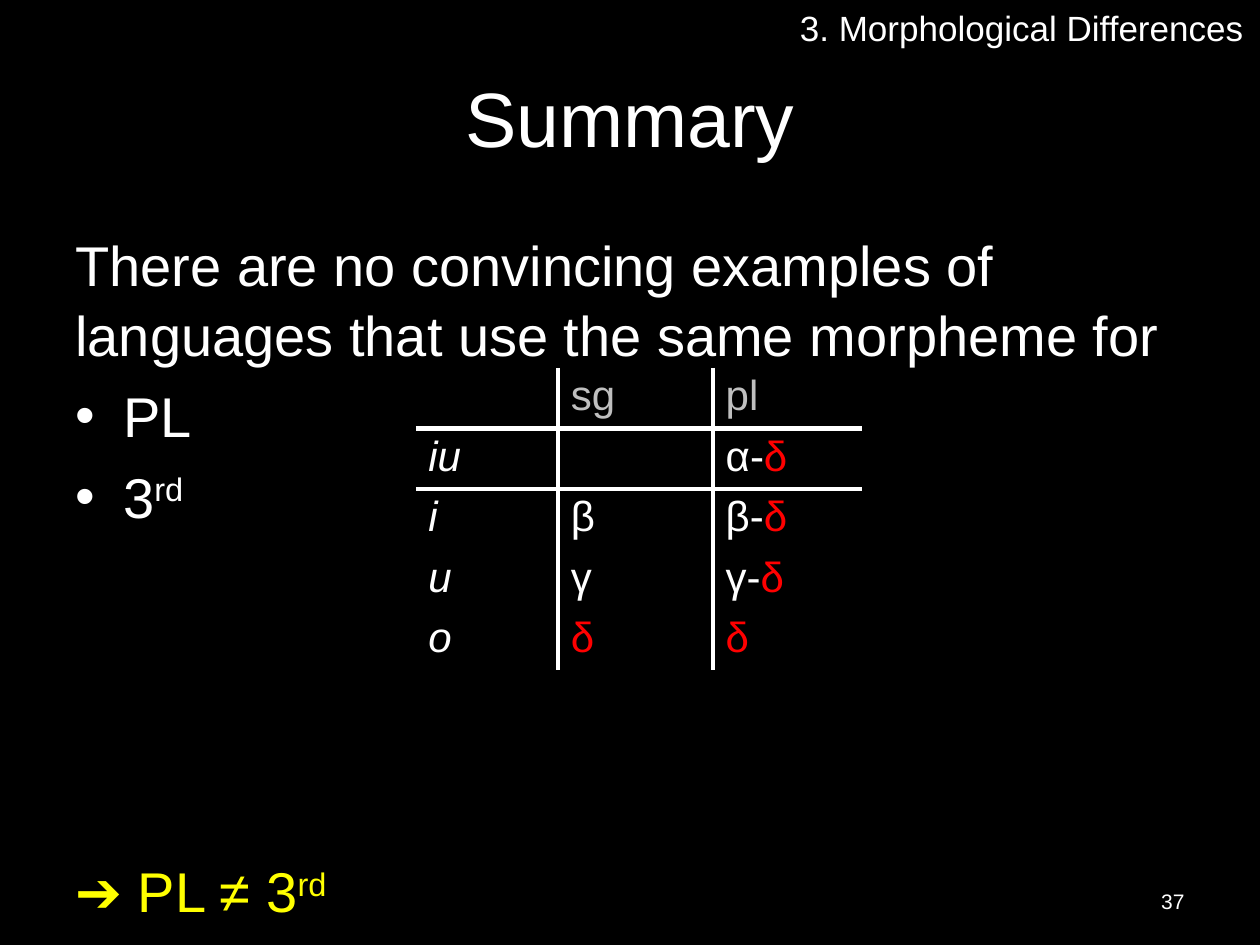
from lxml import etree
from pptx import Presentation
from pptx.dml.color import RGBColor
from pptx.enum.text import MSO_ANCHOR, PP_ALIGN
from pptx.oxml.ns import qn
from pptx.util import Inches, Pt

LEFT, CENTER, RIGHT = PP_ALIGN.LEFT, PP_ALIGN.CENTER, PP_ALIGN.RIGHT
TOP, MIDDLE = MSO_ANCHOR.TOP, MSO_ANCHOR.MIDDLE
WHITE, BLACK, GREY, RED, YELLOW = "FFFFFF", "000000", "BFBFBF", "FF0000", "FFFF00"

COLUMN_WIDTHS = [1.13, 1.23, 1.18]
ROW_HEIGHT = 0.47
RULED_ROWS = RULED_COLUMNS = 2
MORPHEMES = [
    ["", "sg", "pl"],
    ["iu", "", "α-δ"],
    ["i", "β", "β-δ"],
    ["u", "γ", "γ-δ"],
    ["o", "δ", "δ"],
]


def rgb(value):
    """Turn a hex string into a colour."""
    return RGBColor.from_string(value)


def add_span(para, text, size, color=WHITE, italic=False, raised=False):
    """Append a run of Arial text to a paragraph."""
    span = para.add_run()
    span.text = text
    span.font.name = "Arial"
    span.font.size = Pt(size)
    span.font.color.rgb = rgb(color)
    span.font.italic = italic
    if raised:
        span._r.get_or_add_rPr().set("baseline", "30000")


def add_box(page, left, top, width, height, anchor=TOP, wrap=True):
    """Add an empty text box and return its text frame."""
    box = page.shapes.add_textbox(Inches(left), Inches(top), Inches(width), Inches(height))
    frame = box.text_frame
    frame.word_wrap = wrap
    frame.vertical_anchor = anchor
    return frame


def add_line(page, place, text, size, align=LEFT, anchor=TOP, wrap=True):
    """Add a text box that holds one line."""
    para = add_box(page, *place, anchor, wrap).paragraphs[0]
    para.alignment = align
    add_span(para, text, size)


def set_bullet(para):
    """Give a paragraph a hanging round bullet."""
    properties = para._p.get_or_add_pPr()
    properties.set("marL", str(Inches(0.38)))
    properties.set("indent", str(-Inches(0.38)))
    etree.SubElement(properties, qn("a:buFont"), typeface="Arial")
    etree.SubElement(properties, qn("a:buChar"), char="•")


def add_body(page):
    """Add the statement, its two bullets and the conclusion."""
    statement = "There are no convincing examples of languages that use the same morpheme for"
    lines = [
        (statement, "", WHITE, 0, False),
        ("PL", "", WHITE, 6, True),
        ("3", "rd", WHITE, 6, True),
        ("➔ PL ≠ 3", "rd", YELLOW, 185, False),
    ]
    frame = add_box(page, 0.5, 1.75, 9, 4.95)
    for index, (text, ordinal, color, gap, bulleted) in enumerate(lines):
        para = frame.add_paragraph() if index else frame.paragraphs[0]
        para.line_spacing = 1.05
        para.space_before = Pt(gap)
        if bulleted:
            set_bullet(para)
        add_span(para, text, 32, color)
        if ordinal:
            add_span(para, ordinal, 32, color, raised=True)


def set_borders(cell, ruled_edges):
    """Draw the ruled edges of a cell and hide the others."""
    properties = cell._tc.get_or_add_tcPr()
    for position, edge in enumerate("LRTB"):
        line = etree.Element(qn(f"a:ln{edge}"), w=str(Pt(3)))
        if edge in ruled_edges:
            fill = etree.SubElement(line, qn("a:solidFill"))
            etree.SubElement(fill, qn("a:srgbClr"), val=WHITE)
        else:
            etree.SubElement(line, qn("a:noFill"))
        properties.insert(position, line)


def fill_cell(cell, row, column, text):
    """Write one table cell, with the shared morpheme in red."""
    cell.fill.background()
    cell.margin_top = cell.margin_bottom = Inches(0.04)
    rules = {
        "L": 0 < column <= RULED_COLUMNS,
        "R": column < RULED_COLUMNS,
        "T": 0 < row <= RULED_ROWS,
        "B": row < RULED_ROWS,
    }
    set_borders(cell, [edge for edge, ruled in rules.items() if ruled])
    para = cell.text_frame.paragraphs[0]
    stem, shared, _ = text.partition("δ")
    if stem:
        add_span(para, stem, 24, WHITE if row else GREY, italic=column == 0)
    if shared:
        add_span(para, shared, 24, RED)


def add_morpheme_table(page):
    """Add the table of singular and plural morphemes."""
    rows, columns = len(MORPHEMES), len(COLUMN_WIDTHS)
    width, height = sum(COLUMN_WIDTHS), rows * ROW_HEIGHT
    table = page.shapes.add_table(
        rows, columns, Inches(3.3), Inches(2.92), Inches(width), Inches(height)
    ).table
    table.first_row = table.horz_banding = False
    for column, column_width in enumerate(COLUMN_WIDTHS):
        table.columns[column].width = Inches(column_width)
    for row, texts in enumerate(MORPHEMES):
        table.rows[row].height = Inches(ROW_HEIGHT)
        for column, text in enumerate(texts):
            fill_cell(table.cell(row, column), row, column, text)


def main():
    """Build the summary slide and save it."""
    deck = Presentation()
    deck.slide_width, deck.slide_height = Inches(10), Inches(7.5)
    page = deck.slides.add_slide(deck.slide_layouts[6])
    page.background.fill.solid()
    page.background.fill.fore_color.rgb = rgb(BLACK)
    add_line(page, (0.5, 0.3, 9, 1.25), "Summary", 44, CENTER, MIDDLE)
    add_body(page)
    add_line(page, (7.17, 6.95, 2.33, 0.4), "37", 12, RIGHT, MIDDLE)
    add_morpheme_table(page)
    add_line(page, (6.25, 0, 3.75, 0.44), "3. Morphological Differences", 20, wrap=False)
    deck.save("out.pptx")


if __name__ == "__main__":
    main()
